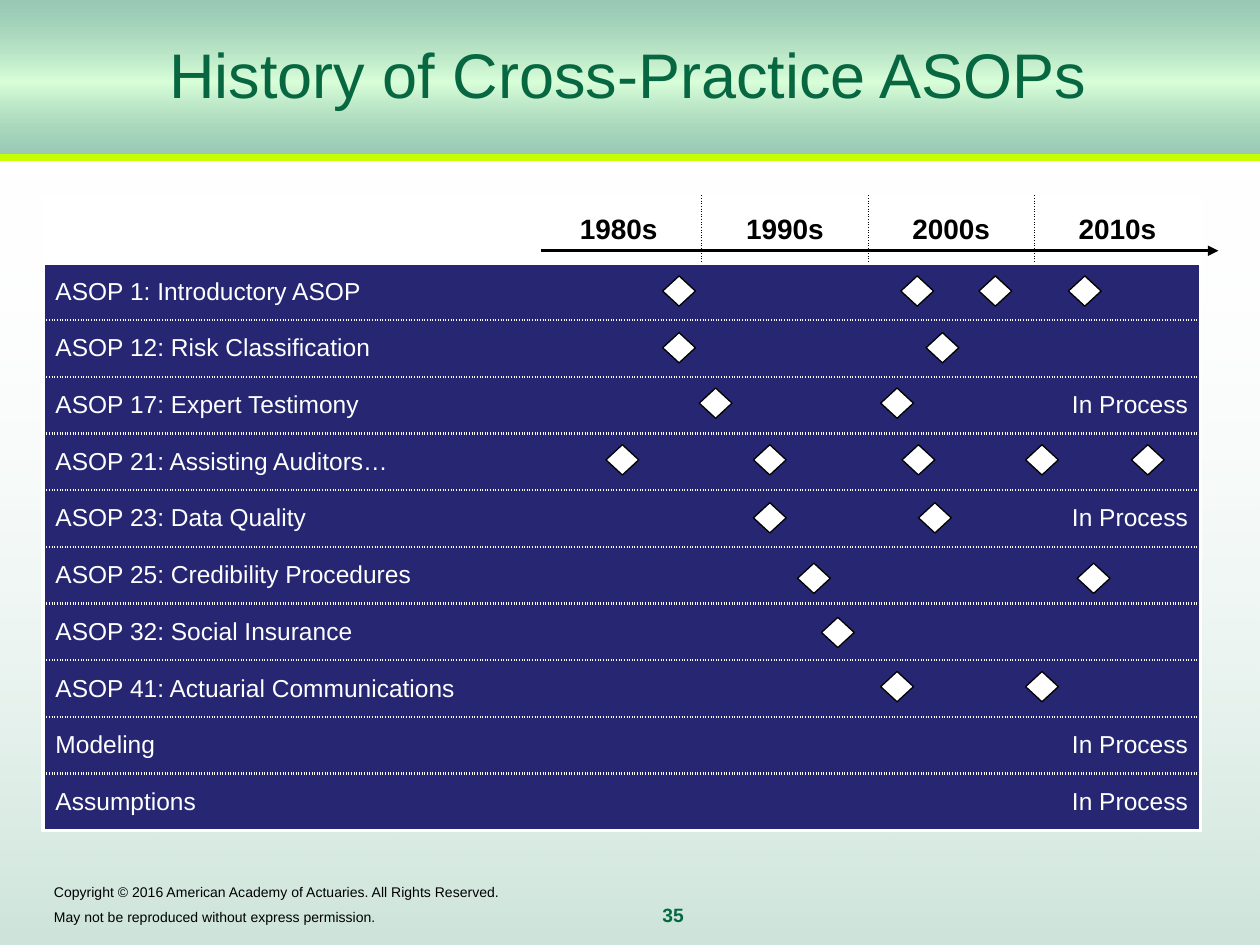
"""Build the slide on the history of cross-practice ASOPs."""
import pptx
import pptx.dml.color
import pptx.enum.shapes
import pptx.enum.text
import pptx.oxml
import pptx.oxml.ns
import pptx.util
from pptx.util import Inches

COLORS = {"green": "35936D", "mint": "CCFFCC", "lime": "C6FF05", "title": "066741",
          "navy": "262673", "white": "FFFFFF", "black": "000000"}
RGB = {name: pptx.dml.color.RGBColor.from_string(value) for name, value in COLORS.items()}
ALIGN = pptx.enum.text.PP_ALIGN
MIDDLE = pptx.enum.text.MSO_ANCHOR.MIDDLE
SHAPE = pptx.enum.shapes.MSO_SHAPE
STRAIGHT = pptx.enum.shapes.MSO_CONNECTOR.STRAIGHT
NAMESPACE = pptx.oxml.ns.nsdecls("a")
NO_GRID_STYLE = "{2D5ABB26-0587-4C30-8999-92F81FD0307C}"


def add_span(para, text, size, color, bold=False):
    span = para.add_run()
    span.text = text
    span.font.name = "Arial"
    span.font.size = pptx.util.Pt(size)
    span.font.bold = bold
    span.font.color.rgb = RGB[color]


def set_border(cell, side, color, width, dash="solid"):
    cell.fill.background()
    properties = cell.fill._xPr
    properties.insert(len(properties) - 1, pptx.oxml.parse_xml(
        f'<a:ln{side} {NAMESPACE} w="{int(width * 12700)}"><a:solidFill><a:srgbClr val="{COLORS[color]}"/>'
        f'</a:solidFill><a:prstDash val="{dash}"/></a:ln{side}>'))


deck = pptx.Presentation()
deck.slide_width = Inches(10)
deck.slide_height = Inches(7.5)
page = deck.slides.add_slide(deck.slide_layouts[5])

bands = [
    (1.25, 6.25, 90, [(0, "white", 0), (100, "green", 25)]),
    (0, 1.25, 270, [(0, "green", 50), (48, "mint", 74), (100, "green", 50)]),
]
for top, height, angle, stops in bands:
    band = page.shapes.add_shape(SHAPE.RECTANGLE, 0, Inches(top), Inches(10), Inches(height))
    band.shadow.inherit = False
    band.line.fill.background()
    band.fill.background()
    stop_list = "".join(
        f'<a:gs pos="{position * 1000}"><a:srgbClr val="{COLORS[color]}">'
        f'<a:alpha val="{opacity * 1000}"/></a:srgbClr></a:gs>' for position, color, opacity in stops)
    gradient = pptx.oxml.parse_xml(
        f'<a:gradFill {NAMESPACE} rotWithShape="1"><a:gsLst>{stop_list}</a:gsLst>'
        f'<a:lin ang="{angle * 60000}" scaled="0"/></a:gradFill>')
    empty_fill = band.element.spPr.find(pptx.oxml.ns.qn("a:noFill"))
    empty_fill.getparent().replace(empty_fill, gradient)

title = page.shapes.title
title.element.getparent().append(title.element)
title.left, title.top, title.width, title.height = Inches(0.33), 0, Inches(9.31), Inches(1.17)
title.text_frame.vertical_anchor = MIDDLE
para = title.text_frame.paragraphs[0]
para.alignment = ALIGN.CENTER
add_span(para, "History of Cross-Practice ASOPs", 36, "title")

footer = page.shapes.add_textbox(Inches(0.33), Inches(6.96), Inches(5.33), Inches(0.42))
footer.text_frame.word_wrap = True
add_span(footer.text_frame.paragraphs[0],
         "Copyright © 2016 American Academy of Actuaries. All Rights Reserved.", 8, "black")
para = footer.text_frame.add_paragraph()
para.space_before = pptx.util.Pt(2)
para._p.get_or_add_pPr().append(pptx.oxml.parse_xml(
    f'<a:tabLst {NAMESPACE}><a:tab pos="{Inches(4.83)}" algn="l"/></a:tabLst>'))
add_span(para, "May not be reproduced without express permission.", 8, "black")
add_span(para, "\t35", 11, "title", True)

decades = ["1980s", "1990s", "2000s", "2010s"]
standards = [
    ("ASOP 1: Introductory ASOP", "", 2.19, [5.26, 7.15, 7.77, 8.48]),
    ("ASOP 12: Risk Classification", "", 2.64, [5.26, 7.35]),
    ("ASOP 17: Expert Testimony", "In Process", 3.08, [5.55, 6.99]),
    ("ASOP 21: Assisting Auditors…", "", 3.53, [4.81, 5.98, 7.16, 8.14, 8.98]),
    ("ASOP 23: Data Quality", "In Process", 3.99, [5.98, 7.29]),
    ("ASOP 25: Credibility Procedures", "", 4.47, [6.33, 8.55]),
    ("ASOP 32: Social Insurance", "", 4.9, [6.52]),
    ("ASOP 41: Actuarial Communications", "", 5.33, [6.99, 8.14]),
    ("Modeling", "In Process", 0, []),
    ("Assumptions", "In Process", 0, []),
]
last_row = len(standards)
last_column = len(decades)
frame = page.shapes.add_table(last_row + 1, last_column + 1,
                              Inches(0.34), Inches(1.56), Inches(9.2), Inches(5.03))
table = frame.table
next(frame.element.iter(pptx.oxml.ns.qn("a:tableStyleId"))).text = NO_GRID_STYLE
table.first_row = table.horz_banding = False
for index, column in enumerate(table.columns):
    column.width = Inches(1.32 if index else 3.91)
for index, row in enumerate(table.rows):
    row.height = Inches(0.45 if index else 0.53)

outer = ("white", 2.25)
header_edge = ("white", 1.5)
row_rule = ("white", 1.5, "dot")
decade_rule = ("black", 0.5, "dot")
for row in range(last_row + 1):
    for column in range(last_column + 1):
        cell = table.cell(row, column)
        cell.vertical_anchor = MIDDLE
        if row == 0:
            borders = {"L": header_edge if column == 0 else decade_rule if column > 1 else None,
                       "R": header_edge if column == last_column else decade_rule if column else None,
                       "T": header_edge, "B": outer}
        else:
            borders = {"L": None if column else outer, "R": outer if column else None,
                       "T": outer if row == 1 else row_rule,
                       "B": outer if row == last_row else row_rule}
        for side, border in borders.items():
            if border:
                set_border(cell, side, *border)
        cell.fill.solid()
        cell.fill.fore_color.rgb = RGB["navy" if row else "white"]

for column, decade in enumerate(decades, 1):
    para = table.cell(0, column).text_frame.paragraphs[0]
    para.alignment = ALIGN.CENTER
    add_span(para, decade, 16, "black", True)
for row, (name, status, top, lefts) in enumerate(standards, 1):
    add_span(table.cell(row, 0).text_frame.paragraphs[0], name, 14, "white")
    timeline = table.cell(row, 1)
    timeline.merge(table.cell(row, last_column))
    if status:
        para = timeline.text_frame.paragraphs[0]
        para.alignment = ALIGN.RIGHT
        add_span(para, status, 14, "white")

rules = [(0, 10, 1.25, "lime", 4.5, False), (4.29, 9.67, 1.99, "black", 1.5, True)]
for left, right, top, color, width, arrow in rules:
    rule = page.shapes.add_connector(STRAIGHT, Inches(left), Inches(top), Inches(right), Inches(top))
    rule.line.color.rgb = RGB[color]
    rule.line.width = pptx.util.Pt(width)
    if arrow:
        rule.line._get_or_add_ln().append(pptx.oxml.parse_xml(f'<a:tailEnd {NAMESPACE} type="triangle"/>'))
    rule.element.spPr.append(pptx.oxml.parse_xml(f"<a:effectLst {NAMESPACE}/>"))

for name, status, top, lefts in standards:
    for left in lefts:
        diamond = page.shapes.add_shape(SHAPE.DIAMOND, Inches(left), Inches(top), Inches(0.26), Inches(0.24))
        diamond.shadow.inherit = False
        diamond.fill.solid()
        diamond.fill.fore_color.rgb = RGB["white"]
        diamond.line.color.rgb = RGB["black"]
        diamond.line.width = pptx.util.Pt(0.75)

deck.save("out.pptx")
